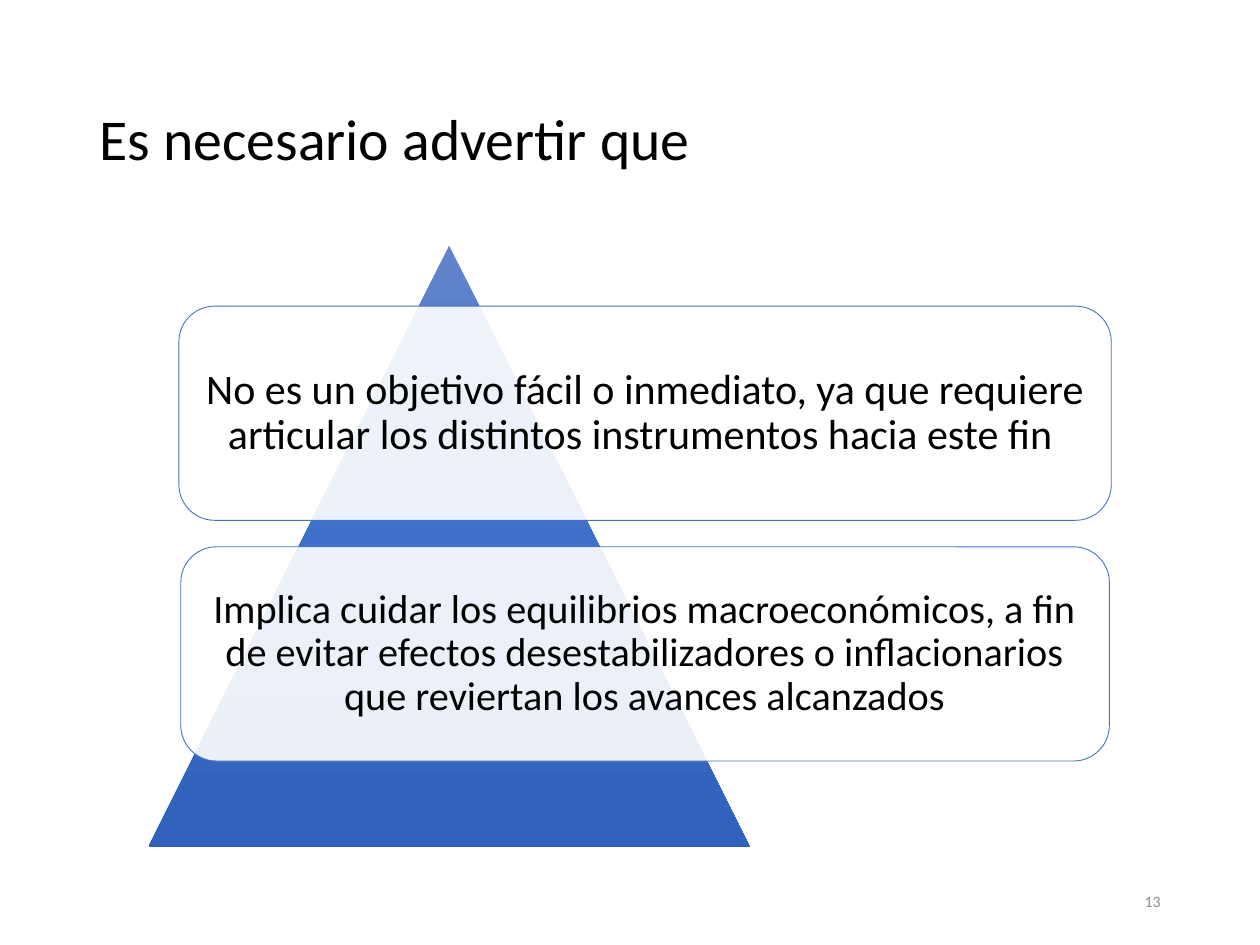
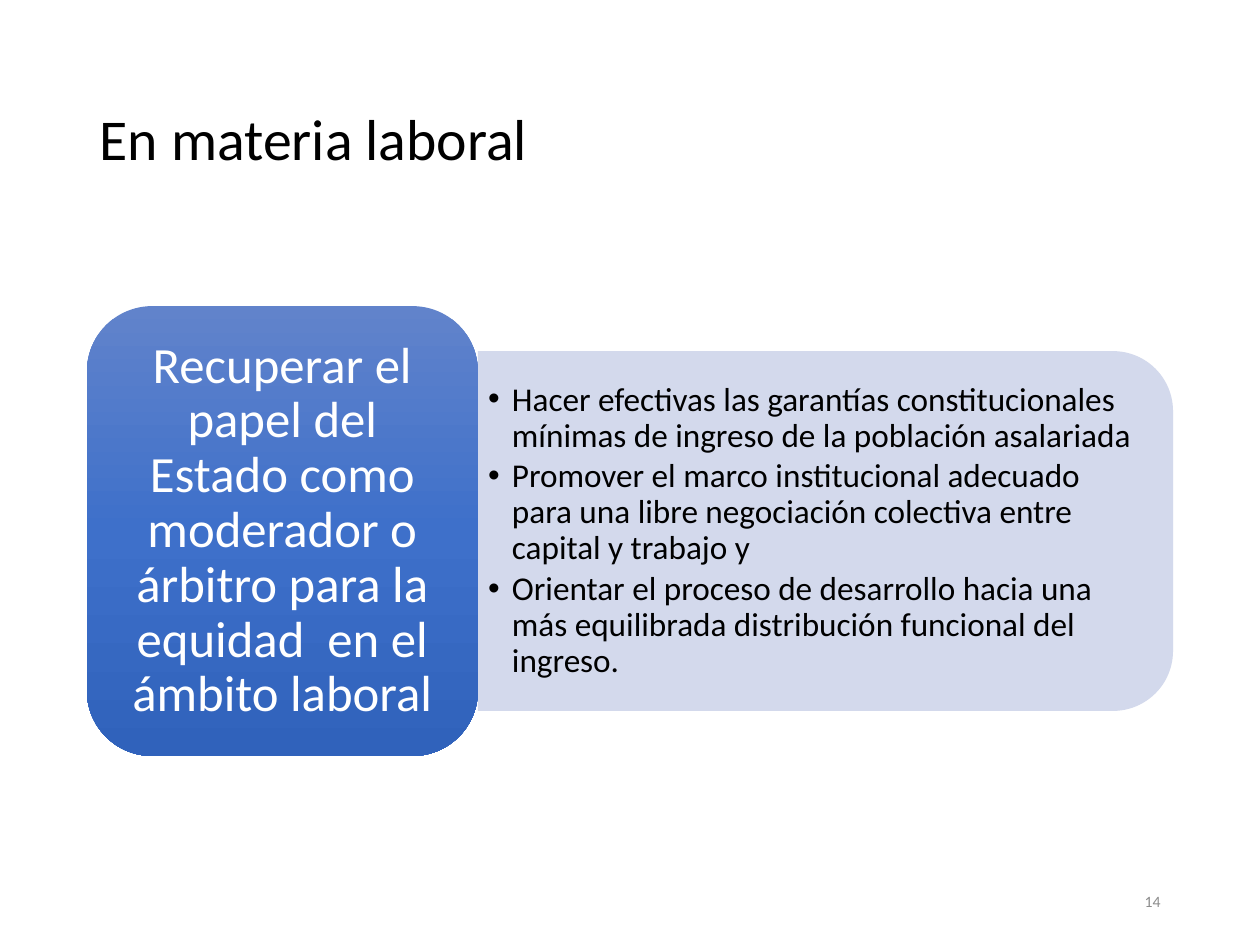
from copy import deepcopy

from lxml import etree
from pptx import Presentation
from pptx import util as u
from pptx.dml.color import RGBColor
from pptx.enum import shapes, text
from pptx.oxml.ns import qn

# Shared look
FONT = "Calibri"
BLACK = RGBColor(0x00, 0x00, 0x00)
WHITE = RGBColor(0xFF, 0xFF, 0xFF)
GREY = RGBColor(0x8C, 0x8C, 0x8C)
BLUE = RGBColor(0x44, 0x72, 0xC4)
PALE_BLUE = RGBColor(0xCF, 0xD5, 0xEA)
BLUE_FADE = (RGBColor(0x61, 0x83, 0xCB), RGBColor(0x3E, 0x70, 0xCA),
             RGBColor(0x30, 0x62, 0xBB))

# Shared grid, in inches
WIDTH, HEIGHT = 10, 7.5
MARGIN = 0.69
CONTENT = WIDTH - 2 * MARGIN
TOP = 2.43  # first row of boxes

TITLE_ONLY, TITLE_AND_BODY = 5, 1


def place(shape, left, top, width, height):
    shape.left, shape.top = u.Inches(left), u.Inches(top)
    shape.width, shape.height = u.Inches(width), u.Inches(height)


def set_insets(frame, side, end):
    frame.margin_left = frame.margin_right = u.Inches(side)
    frame.margin_top = frame.margin_bottom = u.Inches(end)


def write(frame, lines, size, color, align, after=0, spacing=0.9):
    """Fill a text frame, one paragraph for each line."""
    frame.text = "\n".join(lines)
    frame.word_wrap = True
    frame.auto_size = text.MSO_AUTO_SIZE.NONE
    frame.vertical_anchor = text.MSO_ANCHOR.MIDDLE
    for para in frame.paragraphs:
        para.alignment = align
        para.line_spacing = spacing
        para.space_before = u.Pt(0)
        para.space_after = u.Pt(after)
        for span in para.runs:
            span.font.name = FONT
            span.font.size = u.Pt(size)
            span.font.color.rgb = color


def add_plain_shape(page, kind, left, top, width, height):
    shape = page.shapes.add_shape(kind, *map(u.Inches, (left, top, width, height)))
    shape.shadow.inherit = False
    shape.line.fill.background()
    return shape


def fill_translucent(shape, color, percent=90):
    shape.fill.solid()
    shape.fill.fore_color.rgb = color
    tint = shape.element.spPr.find(qn("a:solidFill"))[0]
    etree.SubElement(tint, qn("a:alpha")).set("val", str(percent * 1000))


def fill_fade(shape):
    """Three-stop blue gradient from top to bottom."""
    shape.fill.gradient()
    shape.fill.gradient_angle = 270
    stops = shape.element.spPr.find(qn("a:gradFill")).find(qn("a:gsLst"))
    stops.append(deepcopy(stops[0]))
    for index, (stop, color) in enumerate(zip(shape.fill.gradient_stops, BLUE_FADE)):
        stop.position = index / 2
        stop.color.rgb = color


def add_page(deck, layout, title, number):
    """Slide with the shared title and page number."""
    page = deck.slides.add_slide(deck.slide_layouts[layout])
    heading = page.shapes.title
    place(heading, MARGIN, 0.4, CONTENT, 1.45)
    write(heading.text_frame, [title], 33, BLACK, text.PP_ALIGN.LEFT)
    box = page.shapes.add_textbox(0, 0, 0, 0)
    place(box, WIDTH - MARGIN - 2.25, 6.95, 2.25, 0.4)
    write(box.text_frame, [str(number)], 9, GREY, text.PP_ALIGN.RIGHT, spacing=1)
    return page


def add_card(page, row, width, message, size):
    """Translucent card; the rows are stacked on one centre line."""
    center, height, gap = 5.12, 1.7, 0.21
    card = add_plain_shape(page, shapes.MSO_SHAPE.ROUNDED_RECTANGLE,
                           center - width / 2, TOP + row * (height + gap),
                           width, height)
    fill_translucent(card, WHITE)
    card.line.color.rgb = BLUE
    card.line.width = u.Pt(0.5)
    set_insets(card.text_frame, 0.1, 0.1)
    write(card.text_frame, [message], size, BLACK, text.PP_ALIGN.CENTER)


def add_bullets(body, lines):
    set_insets(body.text_frame, 0.08, 0.04)
    write(body.text_frame, lines, 19, BLACK, text.PP_ALIGN.LEFT, after=2.85)
    hang = u.Inches(0.19)
    for para in body.text_frame.paragraphs:
        props = para._p.get_or_add_pPr()
        props.set("marL", str(hang))
        props.set("indent", str(-hang))
        etree.SubElement(props, qn("a:buFont")).set("typeface", "Arial")
        etree.SubElement(props, qn("a:buChar")).set("char", "•")


def build_warning(deck):
    page = add_page(deck, TITLE_ONLY, "Es necesario advertir que", 13)
    side = 4.77
    pyramid = add_plain_shape(page, shapes.MSO_SHAPE.ISOSCELES_TRIANGLE,
                              1.18, 1.95, side, side)
    fill_fade(pyramid)
    add_card(page, 0, 7.4, "No es un objetivo fácil o inmediato, ya que requiere "
             "articular los distintos instrumentos hacia este fin ", 24)
    add_card(page, 1, 7.37, "Implica cuidar los equilibrios macroeconómicos, a fin "
             "de evitar efectos desestabilizadores o inflacionarios que reviertan "
             "los avances alcanzados", 23)


def build_labour(deck):
    page = add_page(deck, TITLE_AND_BODY, "En materia laboral", 14)
    role_width, role_height = 0.36 * CONTENT, 3.57
    panel_width, panel_height = CONTENT - role_width, 0.8 * role_height
    panel_left, middle = MARGIN + role_width, TOP + role_height / 2

    # Panel turned a quarter so that its round corners face right
    panel = add_plain_shape(page, shapes.MSO_SHAPE.ROUND_2_SAME_RECTANGLE,
                            panel_left + (panel_width - panel_height) / 2,
                            middle - panel_width / 2, panel_height, panel_width)
    panel.rotation = 90
    fill_translucent(panel, PALE_BLUE)

    # List in front of the panel
    body = page.placeholders[1]
    body.element.addprevious(panel.element)
    place(body, panel_left, middle - 1.29, panel_width - 0.14, 2.58)
    add_bullets(body, [
        "Hacer efectivas las garantías constitucionales mínimas de ingreso de la "
        "población asalariada",
        "Promover el marco institucional adecuado para una libre negociación "
        "colectiva entre capital y trabajo y",
        "Orientar el proceso de desarrollo hacia una más equilibrada distribución "
        "funcional del ingreso.",
    ])

    # Role of the state
    role = add_plain_shape(page, shapes.MSO_SHAPE.ROUNDED_RECTANGLE,
                           MARGIN, TOP, role_width, role_height)
    fill_fade(role)
    set_insets(role.text_frame, 0.12, 0.06)
    write(role.text_frame, ["Recuperar el papel del Estado como moderador o árbitro "
                            "para la equidad  en el ámbito laboral"],
          29, WHITE, text.PP_ALIGN.CENTER)


def main():
    deck = Presentation()
    deck.slide_width, deck.slide_height = u.Inches(WIDTH), u.Inches(HEIGHT)
    build_warning(deck)
    build_labour(deck)
    deck.save("out.pptx")


if __name__ == "__main__":
    main()
